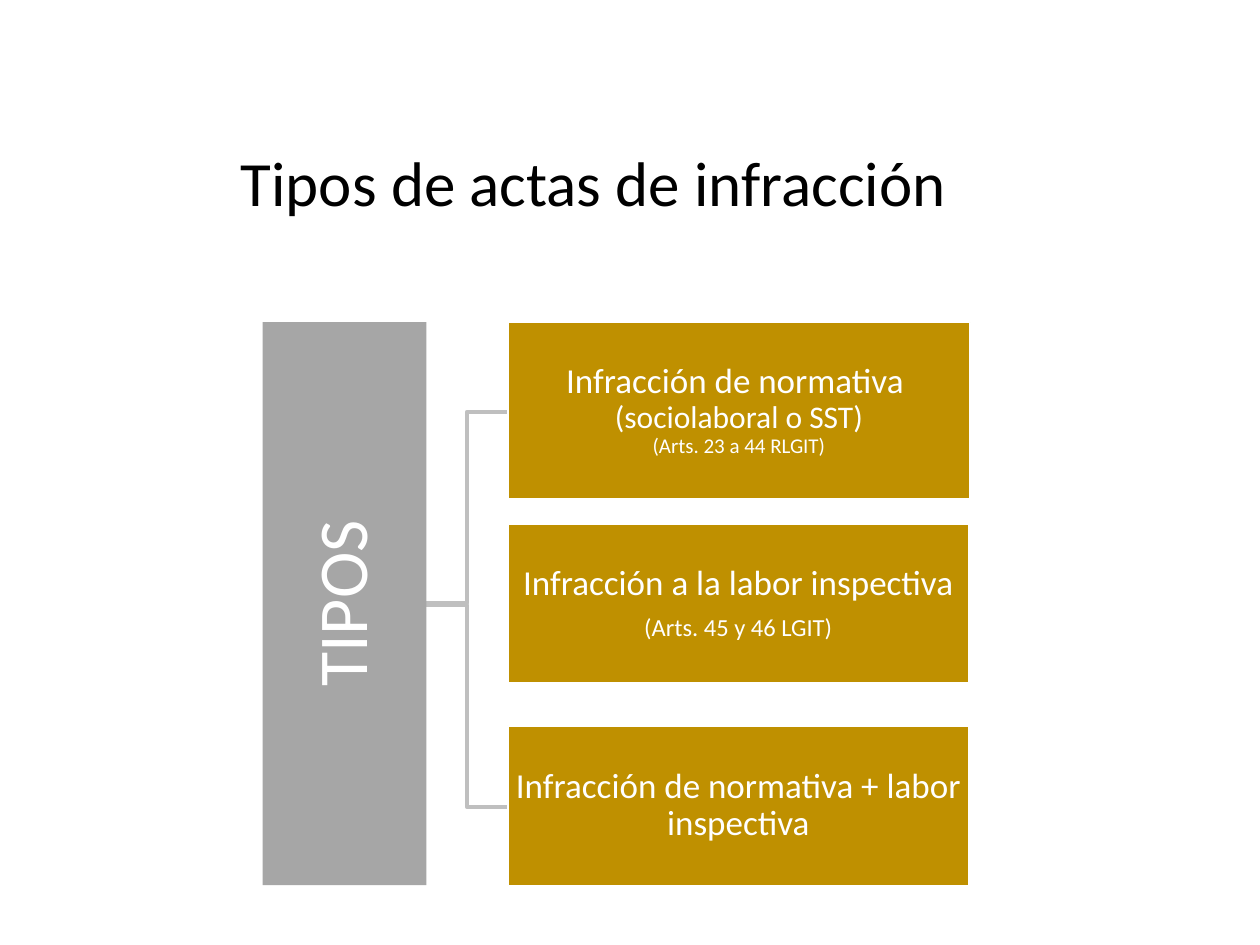
from pptx import Presentation
from pptx.dml.color import RGBColor
from pptx.enum import shapes, text
from pptx.util import Pt

COLORS = {"gold": "BF9000", "gray": "A6A6A6", "branch": "BFBFBF",
          "white": "FFFFFF", "black": "000000"}
FONT = "Calibri"
SPACE_RATIO = 0.35  # space after a paragraph, as a share of its font size

BOX_LEFT = 290.2
# top, width, height, lines as (wording, size, spaced)
BOXES = [
    (184.3, 264.2, 100.8, [("Infracción de normativa ", 20, False),
                           ("(sociolaboral o SST)", 18, False),
                           ("(Arts. 23 a 44 RLGIT)", 12, True)]),
    (299.5, 263.5, 90.7, [("Infracción a la labor inspectiva", 20, True),
                          ("(Arts. 45 y 46 LGIT)", 14, True)]),
    (414.7, 263.5, 91.4, [("Infracción de normativa + labor inspectiva", 20, True)]),
]


def color(name):
    return RGBColor.from_string(COLORS[name])


def write(shape, lines, ink, inset, anchor=text.MSO_ANCHOR.MIDDLE):
    frame = shape.text_frame
    frame.word_wrap = True
    frame.vertical_anchor = anchor
    frame.margin_left = frame.margin_right = Pt(inset)
    frame.margin_top = frame.margin_bottom = Pt(inset)
    frame.text = "\n".join(wording for wording, _, _ in lines)
    for paragraph, (_, size, spaced) in zip(frame.paragraphs, lines):
        paragraph.alignment = text.PP_ALIGN.CENTER
        paragraph.line_spacing = 0.9
        paragraph.space_before = Pt(0)
        paragraph.space_after = Pt(size * SPACE_RATIO if spaced else 0)
        for run in paragraph.runs:
            run.font.name = FONT
            run.font.size = Pt(size)
            run.font.color.rgb = color(ink)


def add_block(slide, left, top, width, height, fill, lines, inset):
    block = slide.shapes.add_shape(shapes.MSO_SHAPE.RECTANGLE,
                                   Pt(left), Pt(top), Pt(width), Pt(height))
    block.shadow.inherit = False
    block.fill.solid()
    block.fill.fore_color.rgb = color(fill)
    block.line.fill.background()
    write(block, lines, "white", inset)
    return block


def add_branch(slide, start_y, end_y):
    start_x, bend_x = 243.4, 266.8
    builder = slide.shapes.build_freeform(Pt(start_x), Pt(start_y))
    builder.add_line_segments([(Pt(bend_x), Pt(start_y)), (Pt(bend_x), Pt(end_y)),
                               (Pt(BOX_LEFT), Pt(end_y))], close=False)
    branch = builder.convert_to_shape()
    branch.shadow.inherit = False
    branch.fill.background()
    branch.line.color.rgb = color("branch")
    branch.line.width = Pt(2.25)


def main():
    prs = Presentation()
    prs.slide_width, prs.slide_height = Pt(720), Pt(540)
    slide = prs.slides.add_slide(prs.slide_layouts[6])

    # Branches to the outer boxes
    add_branch(slide, 346, 461.2)
    add_branch(slide, 344.5, 235.4)

    # Root, turned to read upwards
    root = add_block(slide, 36, 298.1, 321.8, 93.6, "gray", [("TIPOS", 40, True)], 2.2)
    root.rotation = 270

    # Types of record
    for top, width, height, lines in BOXES:
        box = add_block(slide, BOX_LEFT, top, width, height, "gold", lines, 0.9)
        box.line.color.rgb = color("white")
        box.line.width = Pt(1)

    # Title
    title = slide.shapes.add_textbox(Pt(15.1), Pt(84.2), Pt(648), Pt(45.4))
    write(title, [("Tipos de actas de infracción", 36, False)], "black", 3.6,
          text.MSO_ANCHOR.BOTTOM)

    prs.save("out.pptx")


if __name__ == "__main__":
    main()
